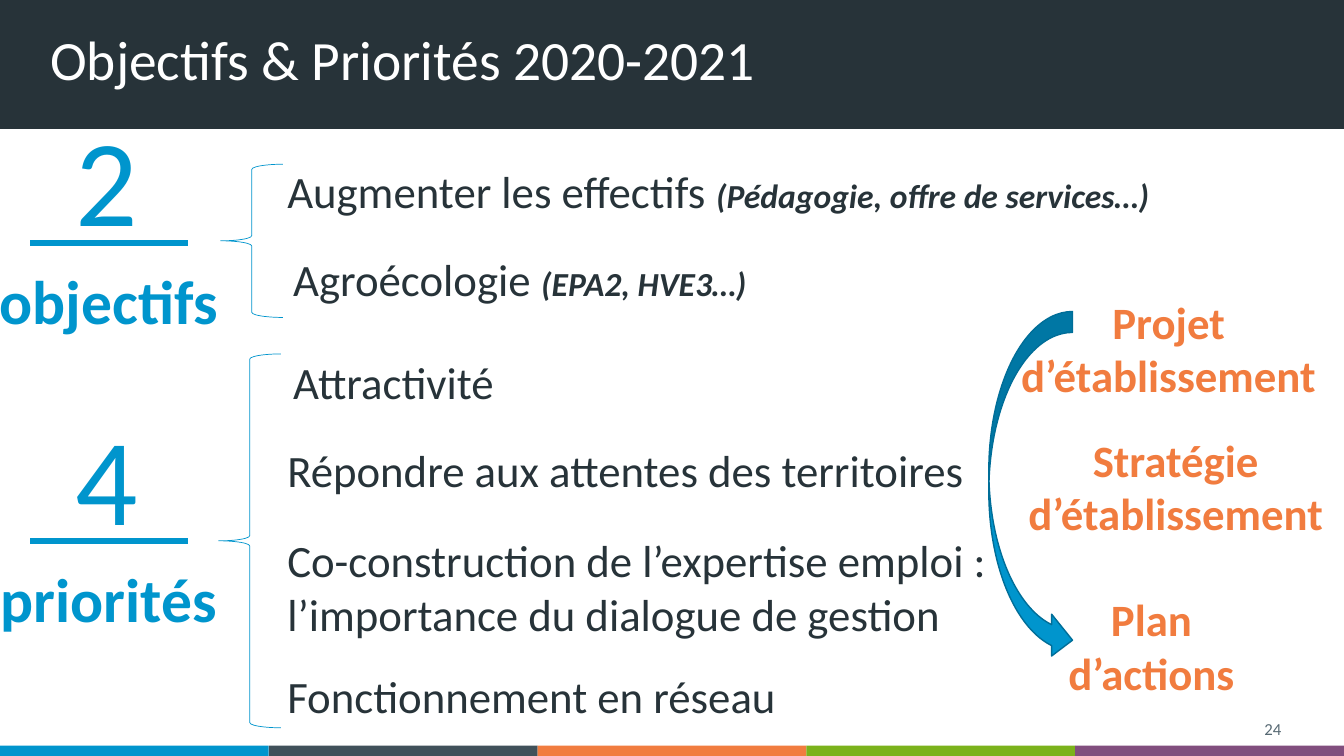
from lxml import etree
from pptx import Presentation, util as u
from pptx.dml.color import RGBColor
from pptx.enum import shapes, text
from pptx.oxml import ns

HUES = {
    "dark": "273339", "blue": "0095CD", "navy": "006E98", "slate": "40515A",
    "orange": "F17C3F", "green": "7BB21B", "plum": "814E7E",
    "grey": "576973", "white": "FFFFFF",
}
KIND = shapes.MSO_SHAPE
ALIGN = text.PP_ALIGN
ANCHOR = text.MSO_ANCHOR


def hue(name):
    """Return the named colour."""
    return RGBColor.from_string(HUES[name])


def shape(slide, kind, area, fill=None, line=None, width=1):
    """Add a preset shape with optional fill and outline."""
    item = slide.shapes.add_shape(kind, *map(u.Cm, area))
    item.shadow.inherit = False
    if fill:
        item.fill.solid()
        item.fill.fore_color.rgb = hue(fill)
    else:
        item.fill.background()
    if line:
        item.line.color.rgb = hue(line)
        item.line.width = u.Pt(width)
    else:
        item.line.fill.background()


def write(para, words, size, color, bold=False, italic=False):
    """Add one run to a paragraph."""
    run = para.add_run()
    run.text = words
    font = run.font
    font.name = "Calibri"
    font.size = u.Pt(size)
    font.bold = bold
    font.italic = italic
    font.color.rgb = hue(color)


def label(slide, area, lines, size, color, bold=False, align=ALIGN.LEFT,
          anchor=ANCHOR.TOP, space=1.0):
    """Add a text box with one paragraph per line and return its frame."""
    frame = slide.shapes.add_textbox(*map(u.Cm, area)).text_frame
    frame.word_wrap = True
    frame.vertical_anchor = anchor
    for i, words in enumerate(lines):
        para = frame.add_paragraph() if i else frame.paragraphs[0]
        para.alignment = align
        para.line_spacing = space
        write(para, words, size, color, bold)
    return frame


def rule(slide, left, right, y):
    """Draw a thick blue horizontal line."""
    ends = map(u.Cm, (left, y, right, y))
    line = slide.shapes.add_connector(shapes.MSO_CONNECTOR.STRAIGHT, *ends)
    line.line.color.rgb = hue("blue")
    line.line.width = u.Pt(4.5)
    etree.SubElement(line._element.spPr, ns.qn("a:effectLst"))


def count(slide, top, digit, name):
    """Add a large figure, its underline and its caption."""
    label(slide, (1.65, top, 2.24, 4.01), [digit], 88, "blue")
    rule(slide, 0.76, 4.75, top + 3.63)
    label(slide, (-0.28, top + 4.01, 6.05, 2.13), [name], 44, "blue", True,
          ALIGN.CENTER)


def frame(slide):
    """Add the title band, colour strip and page number."""
    shape(slide, KIND.RECTANGLE, (0, 0, 33.87, 3.25), "dark")
    wide = 33.87 / 5
    for i, name in enumerate(("blue", "slate", "orange", "green", "plum")):
        shape(slide, KIND.RECTANGLE, (i * wide, 18.79, wide, 0.26), name)
    label(slide, (1.02, 0.64, 29.21, 1.88), ["Objectifs & Priorités 2020-2021"],
          39.6, "white", anchor=ANCHOR.MIDDLE, space=0.9)
    label(slide, (24.92, 17.96, 7.62, 0.79), ["24"], 12, "grey",
          align=ALIGN.RIGHT, anchor=ANCHOR.MIDDLE)


def goals(slide):
    """Add the two objectives with their details."""
    count(slide, 2.49, "2", "objectifs")
    shape(slide, KIND.LEFT_BRACE, (5.56, 4.14, 1.57, 3.86), None, "blue", 0.5)
    for left, top, words, note in (
        (6.99, 3.99, "Augmenter les effectifs ", "(Pédagogie, offre de services…)"),
        (7.14, 6.22, "Agroécologie ", "(EPA2, HVE3…)"),
    ):
        body = label(slide, (left, top, 24.43, 1.63), [words], 32, "dark")
        write(body.paragraphs[0], note, 24, "dark", True, True)


def needs(slide):
    """Add the four priorities."""
    count(slide, 10.01, "4", "priorités")
    shape(slide, KIND.LEFT_BRACE, (5.51, 8.92, 1.57, 9.42), None, "blue", 0.5)
    for left, top, high, space, words in (
        (7.14, 8.97, 2.13, 0.9, "Attractivité"),
        (6.99, 11.18, 2.13, 0.9, "Répondre aux attentes des territoires"),
        (6.99, 13.31, 3, 1.0, "Co-construction de l’expertise emploi : "
                              "l’importance du dialogue de gestion"),
        (6.99, 16.89, 1.7, 0.9, "Fonctionnement en réseau"),
    ):
        label(slide, (left, top, 18.21, high), [words], 32, "dark", space=space)


def steps(slide):
    """Add the path from project to action plan."""
    for left, top, lines in (
        (25.35, 7.29, ["Projet d’établissement"]),
        (25.53, 10.77, ["Stratégie", "d’établissement"]),
        (24.92, 14.78, ["Plan", "d’actions"]),
    ):
        label(slide, (left, top, 8.2, 3), lines, 32, "orange", True, ALIGN.CENTER)
    shape(slide, KIND.CURVED_RIGHT_ARROW, (24.92, 7.85, 2.11, 8.81),
          "blue", "navy")


def main():
    """Build and save the slide."""
    deck = Presentation()
    deck.slide_width = u.Cm(33.87)
    deck.slide_height = u.Cm(19.05)
    slide = deck.slides.add_slide(deck.slide_layouts[6])
    for part in (frame, goals, needs, steps):
        part(slide)
    deck.save("out.pptx")


if __name__ == "__main__":
    main()
